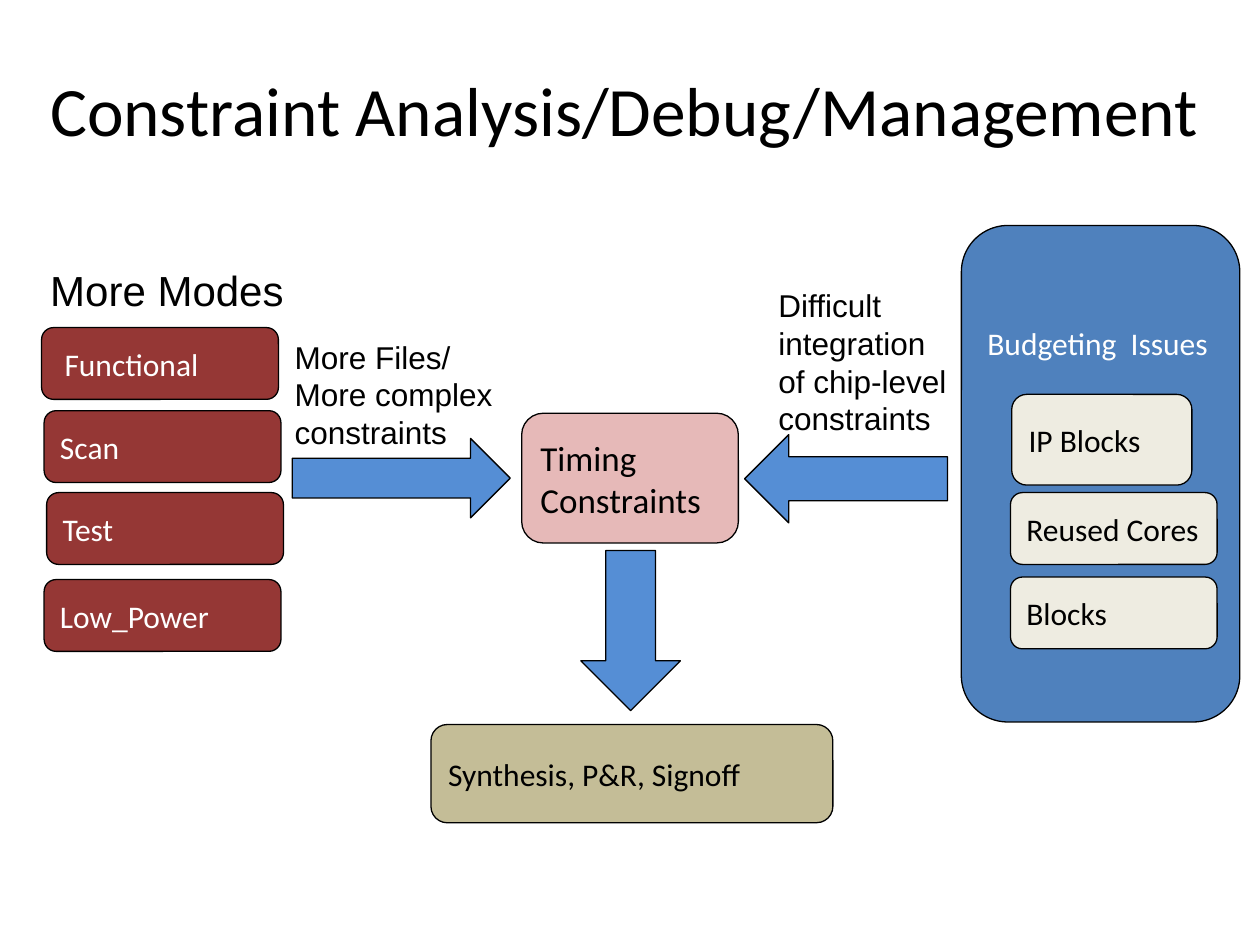
"""Build the constraint analysis, debug and management slide."""
from pptx import Presentation
from pptx.dml.color import RGBColor
from pptx.enum.shapes import MSO_SHAPE
from pptx.enum.text import MSO_ANCHOR, MSO_AUTO_SIZE, PP_ALIGN
from pptx.util import Inches, Pt

COLORS = {
    "black": "000000", "white": "FFFFFF", "blue": "4F81BD", "red": "953735",
    "arrow": "558ED5", "cream": "EEECE1", "pink": "E6B9B8", "tan": "C4BD97",
}
TITLE = "Constraint Analysis/Debug/Management"
MODES = [(" Functional", 0.33, 2.6), ("Scan", 0.35, 3.26),
         ("Test", 0.37, 3.91), ("Low_Power", 0.35, 4.6)]
PARTS = [("IP Blocks", (8.03, 3.13, 1.43, 0.72)),
         ("Reused Cores", (8.02, 3.91, 1.64, 0.57)),
         ("Blocks", (8.02, 4.58, 1.64, 0.57))]
STAGES = [("Timing Constraints", (4.14, 3.28, 1.72, 1.03), "pink", 20),
          ("Synthesis, P&R, Signoff", (3.42, 5.75, 3.19, 0.78), "tan", 18)]
ARROWS = [(MSO_SHAPE.RIGHT_ARROW, (2.32, 3.48, 1.73, 0.63)),
          (MSO_SHAPE.LEFT_ARROW, (5.91, 3.45, 1.61, 0.7)),
          (MSO_SHAPE.DOWN_ARROW, (4.61, 4.37, 0.79, 1.27))]
NOTES = [("More Modes", (0.3, 2.05, 2.07, 0.51), 24),
         ("More Files/\nMore complex\nconstraints", (2.24, 2.63, 1.79, 1.01), 18),
         ("Difficult\nintegration\nof chip-level\nconstraints",
          (6.08, 2.22, 1.55, 1.31), 18)]


def color(name):
    return RGBColor.from_string(COLORS[name])


def write(shape, text, size, ink="black", font="Calibri", **frame):
    body = shape.text_frame
    body.text = text
    style = {"word_wrap": True, "vertical_anchor": MSO_ANCHOR.MIDDLE, **frame}
    for key, value in style.items():
        setattr(body, key, value)
    for para in body.paragraphs:
        para.alignment = PP_ALIGN.LEFT
        for key, value in {"name": font, "size": Pt(size)}.items():
            setattr(para.font, key, value)
        para.font.color.rgb = color(ink)


def draw(slide, kind, at, fill):
    shape = slide.shapes.add_shape(kind, *map(Inches, at))
    shape.shadow.inherit = False
    shape.fill.solid()
    shape.fill.fore_color.rgb = color(fill)
    shape.line.color.rgb = color("black")
    shape.line.width = Pt(0.75)
    return shape


def box(slide, text, at, fill, ink="black", size=18, **frame):
    shape = draw(slide, MSO_SHAPE.ROUNDED_RECTANGLE, at, fill)
    write(shape, text, size, ink, **frame)


def label(slide, text, at, size, **style):
    write(slide.shapes.add_textbox(*map(Inches, at)), text, size, **style)


def main():
    deck = Presentation()
    deck.slide_width, deck.slide_height = Inches(10), Inches(7.5)
    slide = deck.slides.add_slide(deck.slide_layouts[6])
    label(slide, TITLE, (0.3, 0.3, 9.54, 1.12), 39.6)
    box(slide, "Budgeting  Issues", (7.63, 1.79, 2.21, 3.94), "blue", "white",
        vertical_anchor=MSO_ANCHOR.TOP, margin_top=Inches(0.67))
    for text, left, top in MODES:
        box(slide, text, (left, top, 1.88, 0.57), "red", "white")
    for text, at in PARTS:
        box(slide, text, at, "cream")
    for text, at, fill, size in STAGES:
        box(slide, text, at, fill, size=size)
    for kind, at in ARROWS:
        draw(slide, kind, at, "arrow")
    for text, at, size in NOTES:
        label(slide, text, at, size, font="Arial", word_wrap=False,
              vertical_anchor=MSO_ANCHOR.TOP,
              auto_size=MSO_AUTO_SIZE.SHAPE_TO_FIT_TEXT)
    deck.save("out.pptx")


if __name__ == "__main__":
    main()
